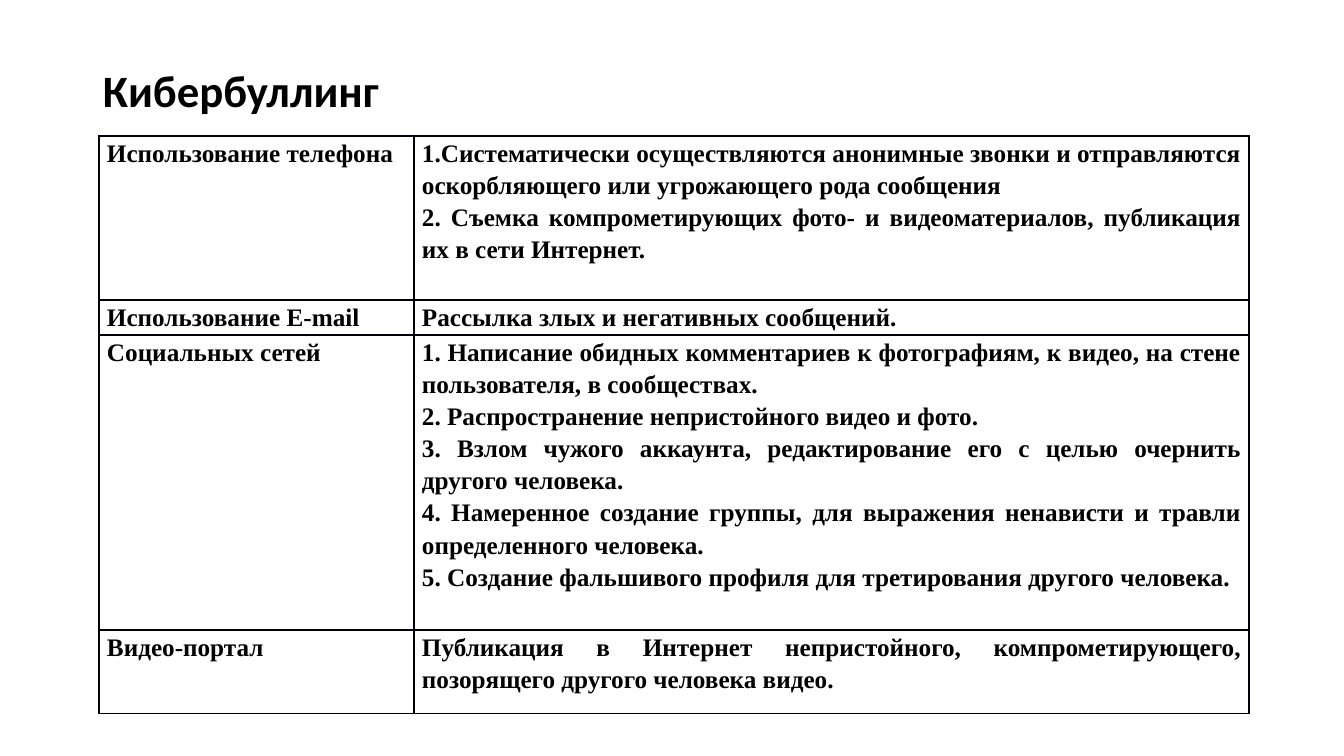
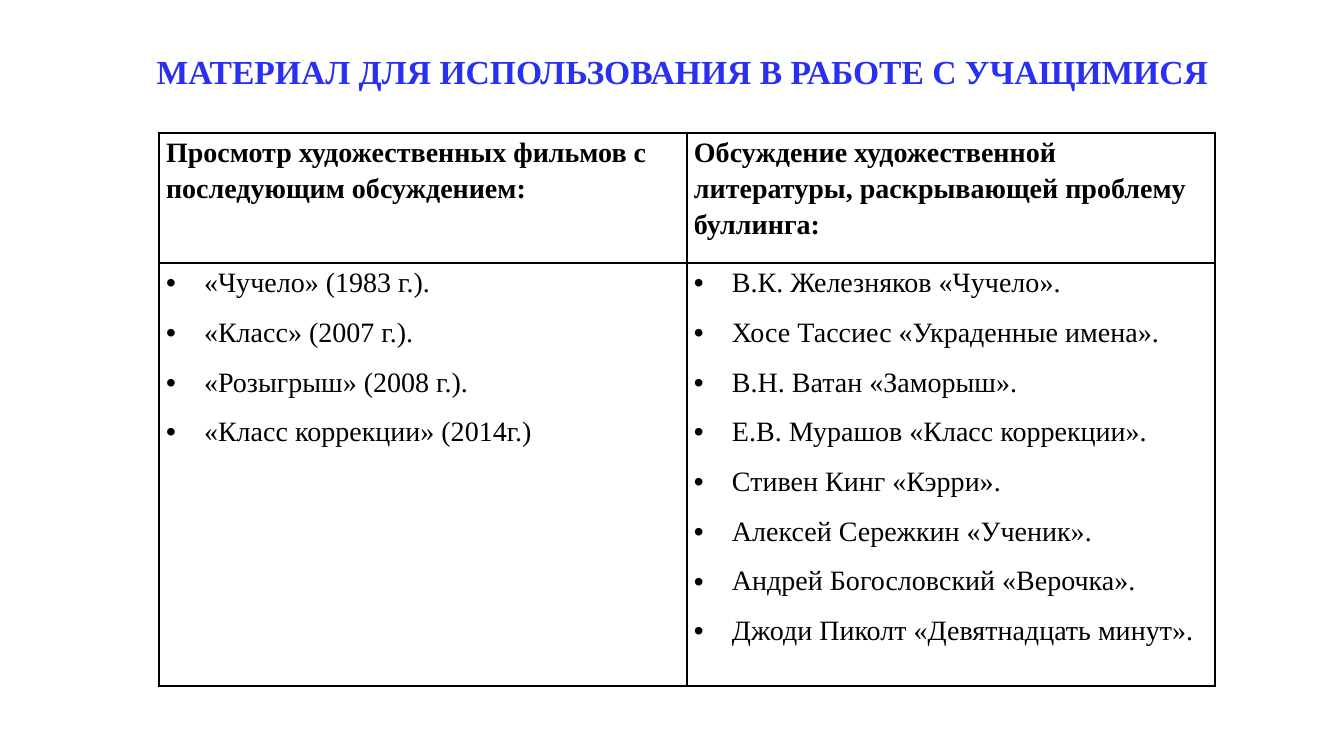
from dataclasses import dataclass

import lxml.etree
import pptx
import pptx.dml.color
import pptx.enum.text
import pptx.oxml.ns
import pptx.util

# Shared look
EMU_PER_PX = 914400 / 100.8
BLACK, INK, BLUE, WHITE = "000000", "00000A", "2930F0", "FFFFFF"
SERIF, SANS = "Times New Roman", "Calibri"
ALIGN = pptx.enum.text.PP_ALIGN
ANCHOR = pptx.enum.text.MSO_ANCHOR
BULLET_INDENT = 38


@dataclass(frozen=True)
class TextStyle:
    size: int
    font: str = SERIF
    color: str = BLACK
    bold: bool = True
    align: ALIGN = ALIGN.LEFT
    spacing: float = 1.0
    after: int = 0
    bullet: bool = False


@dataclass(frozen=True)
class Title:
    text: str
    box: tuple[int, int, int, int]
    style: TextStyle
    anchor: ANCHOR


@dataclass(frozen=True)
class Row:
    height: int
    cells: tuple[tuple[str, ...], ...]
    style: TextStyle


@dataclass(frozen=True)
class Grid:
    left: int
    top: int
    columns: tuple[int, ...]
    rows: tuple[Row, ...]
    side_margin: int
    border: str


HEADLINE = TextStyle(32, font=SANS, spacing=0.9)
CAPS_HEADLINE = TextStyle(24, color=BLUE, align=ALIGN.CENTER)
JUSTIFIED = TextStyle(18, align=ALIGN.JUSTIFY, spacing=1.15)
COLUMN_HEAD = TextStyle(20, spacing=1.15, after=10)
LIST_ITEM = TextStyle(20, bold=False, spacing=1.15, after=10, bullet=True)


# Helpers
def px(length: int) -> int:
    return round(length * EMU_PER_PX)


def rgb(color: str) -> pptx.dml.color.RGBColor:
    return pptx.dml.color.RGBColor.from_string(color)


def add_child(parent, tag: str, **attributes: str):
    return lxml.etree.SubElement(parent, pptx.oxml.ns.qn(tag), attributes)


def write(frame, lines: tuple[str, ...], style: TextStyle) -> None:
    frame.word_wrap = True
    for index, line in enumerate(lines):
        paragraph = frame.add_paragraph() if index else frame.paragraphs[0]
        if style.bullet:
            properties = paragraph._p.get_or_add_pPr()
            properties.set("marL", str(px(BULLET_INDENT)))
            properties.set("indent", str(-px(BULLET_INDENT)))
            add_child(properties, "a:buFont", typeface="Arial")
            add_child(properties, "a:buChar", char="•")
        paragraph.alignment = style.align
        paragraph.line_spacing = style.spacing
        paragraph.space_after = pptx.util.Pt(style.after)
        run = paragraph.add_run()
        run.text = line
        run.font.name = style.font
        run.font.size = pptx.util.Pt(style.size)
        run.font.bold = style.bold
        run.font.color.rgb = rgb(style.color)


def draw_borders(cell, color: str) -> None:
    properties = cell._tc.get_or_add_tcPr()
    for side in ("a:lnL", "a:lnR", "a:lnT", "a:lnB"):
        line = add_child(properties, side, w=str(pptx.util.Pt(1)))
        add_child(add_child(line, "a:solidFill"), "a:srgbClr", val=color)


def add_title(slide, title: Title) -> None:
    frame = slide.shapes.add_textbox(*map(px, title.box)).text_frame
    frame.vertical_anchor = title.anchor
    write(frame, (title.text,), title.style)


def add_grid(slide, grid: Grid) -> None:
    height = sum(row.height for row in grid.rows)
    table = slide.shapes.add_table(
        len(grid.rows), len(grid.columns),
        px(grid.left), px(grid.top), px(sum(grid.columns)), px(height),
    ).table
    table.first_row = table.horz_banding = False
    for column, width in zip(table.columns, grid.columns):
        column.width = px(width)
    for table_row, row in zip(table.rows, grid.rows):
        table_row.height = px(row.height)
        for cell, lines in zip(table_row.cells, row.cells):
            cell.margin_left = cell.margin_right = px(grid.side_margin)
            cell.margin_top = cell.margin_bottom = 0
            draw_borders(cell, grid.border)
            cell.fill.solid()
            cell.fill.fore_color.rgb = rgb(WHITE)
            write(cell.text_frame, lines, row.style)


# Slide 1: forms of cyberbullying
CYBERBULLYING = (
    Title("Кибербуллинг", (93, 20, 1159, 146), HEADLINE, ANCHOR.MIDDLE),
    Grid(99, 136, (315, 835), (
        Row(164, (
            ("Использование телефона",),
            ("1.Систематически осуществляются анонимные звонки и отправляются "
             "оскорбляющего или угрожающего рода сообщения",
             "2. Съемка компрометирующих фото- и видеоматериалов, публикация "
             "их в сети Интернет."),
        ), JUSTIFIED),
        Row(35, (
            ("Использование E-mail",),
            ("Рассылка злых и негативных сообщений.",),
        ), JUSTIFIED),
        Row(295, (
            ("Социальных сетей",),
            ("1. Написание обидных комментариев к фотографиям, к видео, на стене "
             "пользователя, в сообществах.",
             "2. Распространение непристойного видео и фото.",
             "3. Взлом чужого аккаунта, редактирование его с целью очернить "
             "другого человека.",
             "4. Намеренное создание группы, для выражения ненависти и травли "
             "определенного человека.",
             "5. Создание фальшивого профиля для третирования другого человека."),
        ), JUSTIFIED),
        Row(84, (
            ("Видео-портал",),
            ("Публикация в Интернет непристойного, компрометирующего, "
             "позорящего другого человека видео.",),
        ), JUSTIFIED),
    ), side_margin=8, border=INK),
)

# Slide 2: films and books for work with pupils
MATERIALS = (
    Title("МАТЕРИАЛ ДЛЯ ИСПОЛЬЗОВАНИЯ В РАБОТЕ С УЧАЩИМИСЯ",
          (41, 46, 1283, 50), CAPS_HEADLINE, ANCHOR.TOP),
    Grid(159, 133, (528, 528), (
        Row(130, (
            ("Просмотр художественных фильмов с последующим обсуждением:",),
            ("Обсуждение художественной литературы, раскрывающей проблему "
             "буллинга:",),
        ), COLUMN_HEAD),
        Row(423, (
            ("«Чучело» (1983 г.).",
             "«Класс» (2007 г.).",
             "«Розыгрыш» (2008 г.).",
             "«Класс коррекции» (2014г.)"),
            ("В.К. Железняков «Чучело».",
             "Хосе Тассиес «Украденные имена».",
             "В.Н. Ватан «Заморыш».",
             "Е.В. Мурашов «Класс коррекции».",
             "Стивен Кинг «Кэрри».",
             "Алексей Сережкин «Ученик».",
             "Андрей Богословский «Верочка».",
             "Джоди Пиколт «Девятнадцать минут»."),
        ), LIST_ITEM),
    ), side_margin=7, border=BLACK),
)


def main() -> None:
    deck = pptx.Presentation()
    deck.slide_width, deck.slide_height = px(1344), px(756)
    blank = deck.slide_layouts[6]
    for title, grid in (CYBERBULLYING, MATERIALS):
        slide = deck.slides.add_slide(blank)
        add_title(slide, title)
        add_grid(slide, grid)
    deck.save("out.pptx")


if __name__ == "__main__":
    main()
